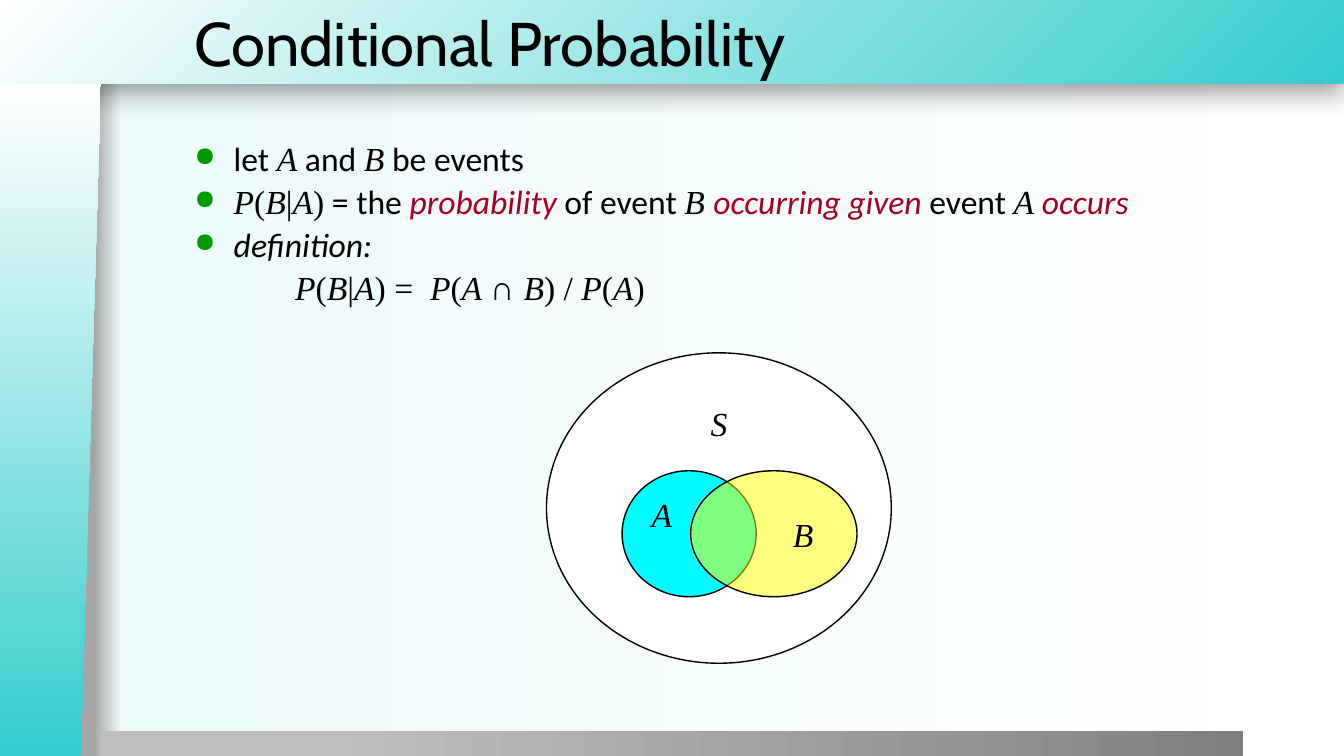
from dataclasses import dataclass

from lxml.etree import SubElement
from pptx import Presentation
from pptx.dml.color import RGBColor
from pptx.enum.shapes import MSO_SHAPE as SHAPE
from pptx.enum.text import MSO_ANCHOR as ANCHOR, PP_ALIGN as ALIGN
from pptx.oxml.ns import qn
from pptx.util import Inches, Pt


@dataclass(frozen=True)
class Theme:
    teal: str = "34CCCC"
    white: str = "FFFFFF"
    ink: str = "000000"
    key: str = "A50021"
    bullet: str = "009900"
    cyan: str = "00FDFF"
    yellow: str = "FFFF00"
    backdrop: tuple = ((7, "A6A6A6"), (9, "EDFBFB"), (100, "FFFFFF"))
    footer: tuple = ((20, "BFBFBF"), (100, "808080"))
    title_size: int = 44
    text_size: int = 24


T = Theme()
W, H = 13.33, 7.5
HEADER = 0.83
MARGIN = 1.83

TITLE = "Conditional Probability"
# style: (font, italic, colour)
STYLES = {
    "text": ("Calibri", False, T.ink),
    "slanted": ("Calibri", True, T.ink),
    "key": ("Calibri", True, T.key),
    "var": ("Times New Roman", True, T.ink),
    "math": ("Times New Roman", False, T.ink),
    "symbol": ("Arial", False, T.ink),
}
B_GIVEN_A = [("var", "P"), ("math", "("), ("var", "B"), ("math", "|"), ("var", "A")]
BULLETS = [
    [("text", "let "), ("var", "A"), ("text", " and "), ("var", "B"),
     ("text", " be events")],
    [*B_GIVEN_A, ("math", ")"), ("text", " = the "), ("key", "probability"),
     ("text", " of event "), ("var", "B "), ("key", "occurring given"),
     ("text", " event "), ("var", "A "), ("key", "occurs")],
    [("slanted", "definition:")],
]
FORMULA = [
    *B_GIVEN_A, ("math", ") =  "), ("var", "P"), ("math", "("), ("var", "A "),
    ("symbol", "∩ "), ("var", "B"), ("math", ") / "), ("var", "P"),
    ("math", "("), ("var", "A"), ("math", ")"),
]
# label, box, fill, opacity, anchor, alignment, left inset
VENN = [
    ("S", (5.42, 3.5, 3.42, 3.08), T.white, 100, ANCHOR.TOP, ALIGN.CENTER, 0.1),
    ("A", (6.17, 4.67, 1.33, 1.25), T.cyan, 100, ANCHOR.TOP, ALIGN.LEFT, 0.1),
    ("B", (6.85, 4.67, 1.65, 1.25), T.yellow, 50, ANCHOR.MIDDLE, ALIGN.CENTER, 0.68),
]


def rgb(color):
    return RGBColor.from_string(color)


def node(parent, tag, **attrs):
    return SubElement(parent, qn(tag), {k: str(v) for k, v in attrs.items()})


def gradient(fill, owner, stops, to_corner=False):
    """Fill with stops, left to right or outwards from the bottom right corner."""
    fill.gradient()
    grad = next(owner.iter(qn("a:gradFill")))
    for child in list(grad):
        grad.remove(child)
    stop_list = node(grad, "a:gsLst")
    for share, color in stops:
        node(node(stop_list, "a:gs", pos=share * 1000), "a:srgbClr", val=color)
    if to_corner:
        circle = node(grad, "a:path", path="circle")
        node(circle, "a:fillToRect", l=100000, t=100000)
    else:
        node(grad, "a:lin", ang=0, scaled=0)


def add_shape(s, kind, box):
    sp = s.shapes.add_shape(kind, *map(Inches, box))
    sp.shadow.inherit = False
    return sp


def add_band(s, kind, box, stops, to_corner=False):
    sp = add_shape(s, kind, box)
    sp.line.fill.background()
    gradient(sp.fill, sp.element.spPr, stops, to_corner)
    return sp


def add_frame(s):
    gradient(s.background.fill, s.element, T.backdrop)
    teal_to_white = ((0, T.teal), (100, T.white))
    header = add_band(s, SHAPE.RECTANGLE, (0, 0, W, HEADER), teal_to_white, True)
    effects = header.element.spPr.find(qn("a:effectLst"))
    shadow = node(effects, "a:outerShdw", blurRad=Pt(20), dist=Pt(6), dir=5400000)
    node(node(shadow, "a:srgbClr", val=T.ink), "a:alpha", val=40000)

    add_band(s, SHAPE.RECTANGLE, (1, H - 0.25, W - 2, 0.25), T.footer)

    # The side band is drawn lying down, then turned about its centre.
    length, width = H - HEADER, 1
    lying = ((width - length) / 2, HEADER + (length - width) / 2, length, width)
    side = add_band(s, SHAPE.FLOWCHART_MANUAL_INPUT, lying, teal_to_white)
    side.rotation = 270
    side.element.spPr.xfrm.set("flipV", "1")


def add_text(s, box):
    tf = s.shapes.add_textbox(*map(Inches, box)).text_frame
    tf.word_wrap = True
    return tf


def add_title(s):
    tf = add_text(s, (MARGIN, 0, W - MARGIN, HEADER))
    tf.vertical_anchor = ANCHOR.MIDDLE
    p = tf.paragraphs[0]
    p.text = TITLE
    p.font.name, p.font.size = "Cabin", Pt(T.title_size)
    p.font.color.rgb = rgb(T.ink)


def fill_paragraph(p, runs):
    p.line_spacing = 0.9
    p.space_before = Pt(0.2 * T.text_size)
    p.font.size = Pt(T.text_size)
    for style, text in runs:
        r = p.add_run()
        r.text = text
        r.font.name, r.font.italic, color = STYLES[style]
        r.font.size = Pt(T.text_size)
        r.font.color.rgb = rgb(color)


def add_body(s):
    tf = add_text(s, (MARGIN, 1.36, 10.5, 5.79))
    for i, runs in enumerate([*BULLETS, FORMULA]):
        p = tf.add_paragraph() if i else tf.paragraphs[0]
        fill_paragraph(p, runs)
        props = p._p.get_or_add_pPr()
        if runs is FORMULA:
            props.set("marL", str(Inches(1)))
            continue
        props.set("marL", str(Inches(0.39)))
        props.set("indent", str(Inches(-0.39)))
        spacing_end = props.find(qn("a:spcBef"))
        color = node(props, "a:buClr")
        node(color, "a:srgbClr", val=T.bullet)
        size = node(props, "a:buSzPct", val=80000)
        char = node(props, "a:buChar", char="●")
        for part in (char, size, color):
            spacing_end.addnext(part)


def add_venn(s):
    for label, box, color, opacity, anchor, align, inset in VENN:
        sp = add_shape(s, SHAPE.OVAL, box)
        sp.fill.solid()
        sp.fill.fore_color.rgb = rgb(color)
        if opacity < 100:
            fill_color = next(sp.element.spPr.iter(qn("a:srgbClr")))
            node(fill_color, "a:alpha", val=opacity * 1000)
        sp.line.color.rgb, sp.line.width = rgb(T.ink), Pt(1)
        tf = sp.text_frame
        tf.vertical_anchor, tf.margin_left = anchor, Inches(inset)
        p = tf.paragraphs[0]
        p.text, p.alignment = label, align
        p.font.name, p.font.italic, ink = STYLES["var"]
        p.font.size = Pt(T.text_size)
        p.font.color.rgb = rgb(ink)


def main():
    prs = Presentation()
    prs.slide_width, prs.slide_height = Inches(W), Inches(H)
    s = prs.slides.add_slide(prs.slide_layouts[6])
    add_frame(s)
    add_title(s)
    add_body(s)
    add_venn(s)
    prs.save("out.pptx")


if __name__ == "__main__":
    main()
